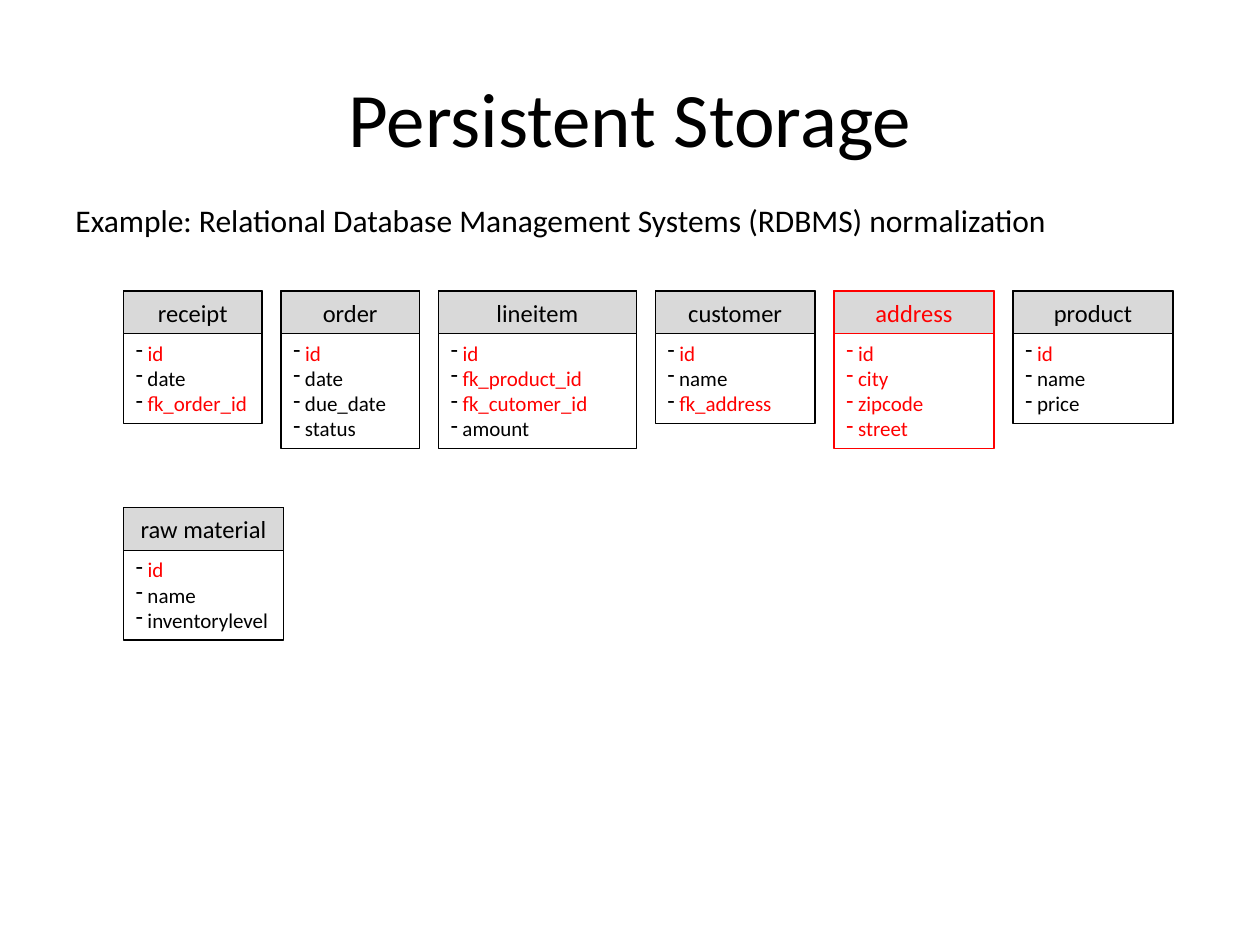
from dataclasses import dataclass

from lxml import etree
from pptx import Presentation
from pptx import util as u
from pptx.dml.color import RGBColor
from pptx.enum import shapes, text
from pptx.oxml.ns import qn


@dataclass(frozen=True)
class Theme:
    font: str = "Calibri"
    ink: RGBColor = RGBColor(0, 0, 0)
    accent: RGBColor = RGBColor(0xFF, 0, 0)
    header_fill: RGBColor = RGBColor(0xD9, 0xD9, 0xD9)
    title_size: int = 44
    subtitle_size: int = 18
    header_size: int = 14
    field_size: int = 12
    line_width: float = 0.75


@dataclass(frozen=True)
class Entity:
    name: str
    width: float
    fields: tuple[str, ...]
    highlighted: bool = False


THEME = Theme()
LEFT, GAP = 0.98, 0.15
HEADER_HEIGHT, FIELD_HEIGHT, FIELD_PADDING = 0.34, 0.2, 0.11

# Each row of entities: top edge, then entities from left to right
ROWS = (
    (2.31, (
        Entity("receipt", 1.1, ("id", "date", "fk_order_id")),
        Entity("order", 1.1, ("id", "date", "due_date", "status")),
        Entity("lineitem", 1.57, ("id", "fk_product_id", "fk_cutomer_id", "amount")),
        Entity("customer", 1.27, ("id", "name", "fk_address")),
        Entity("address", 1.27, ("id", "city", "zipcode", "street"), highlighted=True),
        Entity("product", 1.27, ("id", "name", "price")),
    )),
    (4.03, (
        Entity("raw material", 1.27, ("id", "name", "inventorylevel")),
    )),
)


def style(font, size: float, color: RGBColor) -> None:
    font.name = THEME.font
    font.size = u.Pt(size)
    font.color.rgb = color


def place(left: float, top: float, width: float, height: float) -> tuple:
    return tuple(u.Inches(value) for value in (left, top, width, height))


def add_rectangle(page, area: tuple, line: RGBColor, fill: RGBColor | None = None):
    box = page.shapes.add_shape(shapes.MSO_SHAPE.RECTANGLE, *area)
    box.shadow.inherit = False
    if fill is None:
        box.fill.background()
    else:
        box.fill.solid()
        box.fill.fore_color.rgb = fill
    box.line.color.rgb = line
    box.line.width = u.Pt(THEME.line_width)
    return box


def add_dash(para) -> None:
    properties = para._p.get_or_add_pPr()
    etree.SubElement(properties, qn("a:buFontTx"))
    etree.SubElement(properties, qn("a:buChar")).set("char", "-")


def add_fields(page, area: tuple, entity: Entity) -> None:
    frame = page.shapes.add_textbox(*area).text_frame
    frame.word_wrap = True
    base = THEME.accent if entity.highlighted else THEME.ink
    for index, field in enumerate(entity.fields):
        para = frame.add_paragraph() if index else frame.paragraphs[0]
        add_dash(para)
        # Keys stand out from the dash and from the ordinary fields
        is_key = field == "id" or field.startswith("fk_")
        for words, color in ((" ", base), (field, THEME.accent if is_key else base)):
            span = para.add_run()
            span.text = words
            style(span.font, THEME.field_size, color)


def add_entity(page, left: float, top: float, entity: Entity) -> None:
    color = THEME.accent if entity.highlighted else THEME.ink
    body_height = FIELD_HEIGHT * len(entity.fields) + FIELD_PADDING
    add_rectangle(page, place(left, top, entity.width, HEADER_HEIGHT + body_height), color)
    header = add_rectangle(page, place(left, top, entity.width, HEADER_HEIGHT),
                           color, THEME.header_fill)
    header.text_frame.vertical_anchor = text.MSO_ANCHOR.MIDDLE
    para = header.text_frame.paragraphs[0]
    para.text = entity.name
    para.alignment = text.PP_ALIGN.CENTER
    style(para.font, THEME.header_size, color)
    add_fields(page, place(left, top + HEADER_HEIGHT, entity.width, body_height), entity)


def add_heading(page) -> None:
    title = page.shapes.title
    title.left, title.top, title.width, title.height = place(0.5, 0.3, 9, 1.25)
    title.text_frame.vertical_anchor = text.MSO_ANCHOR.MIDDLE
    para = title.text_frame.paragraphs[0]
    para.text = "Persistent Storage"
    para.alignment = text.PP_ALIGN.CENTER
    style(para.font, THEME.title_size, THEME.ink)

    subtitle = page.shapes.add_textbox(*place(0.5, 1.55, 7.99, 0.4))
    subtitle.text_frame.word_wrap = False
    para = subtitle.text_frame.paragraphs[0]
    para.text = "Example: Relational Database Management Systems (RDBMS) normalization"
    style(para.font, THEME.subtitle_size, THEME.ink)


def main() -> None:
    deck = Presentation()
    deck.slide_width, deck.slide_height = u.Inches(10), u.Inches(7.5)
    page = deck.slides.add_slide(deck.slide_layouts.get_by_name("Title Only"))
    add_heading(page)

    # Entities run left to right with equal gaps
    for top, entities in ROWS:
        left = LEFT
        for entity in entities:
            add_entity(page, left, top, entity)
            left += entity.width + GAP
    deck.save("out.pptx")


if __name__ == "__main__":
    main()
